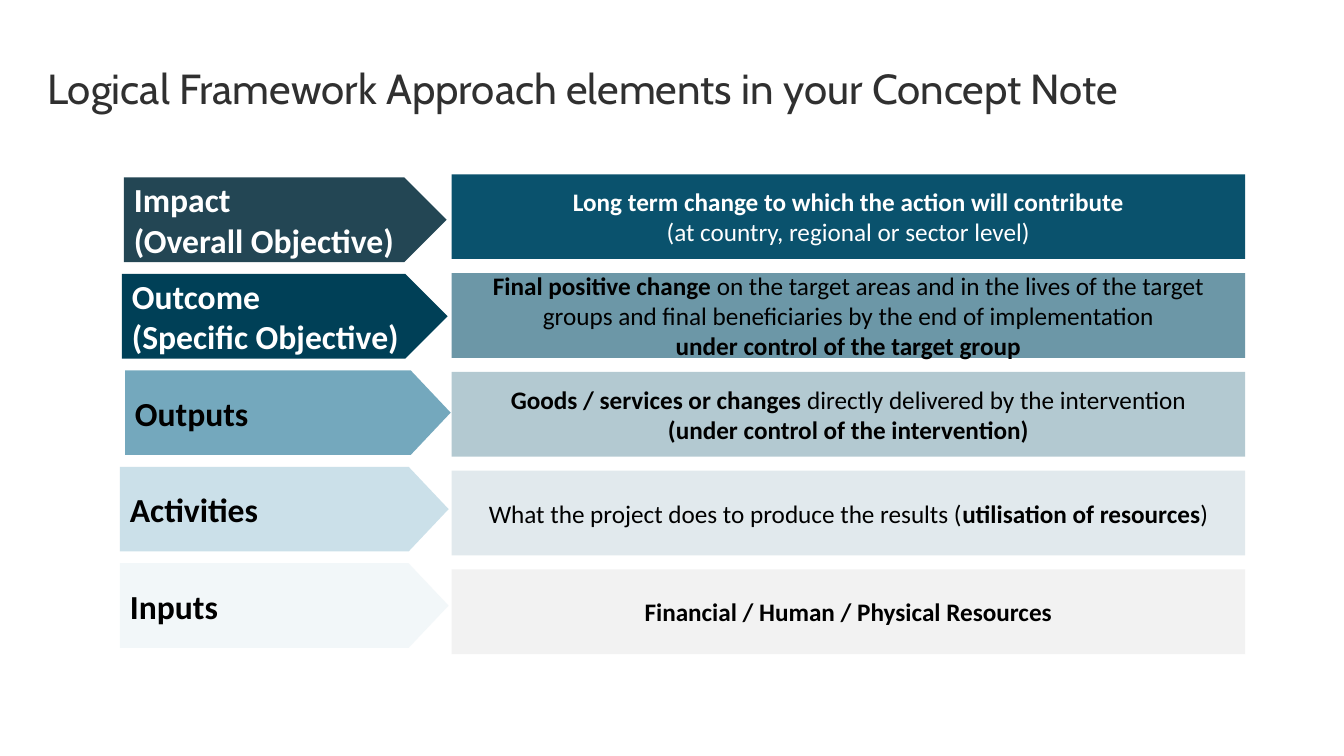
from lxml import etree
from pptx import Presentation
from pptx import util as u
from pptx.dml.color import RGBColor
from pptx.enum import shapes, text
from pptx.oxml.ns import qn

# Grid: both columns share a row height, each has its own pitch
ROW_H = 0.84
ARROW_TOP, ARROW_PITCH = 1.76, 0.957
BOX_LEFT, BOX_TOP, BOX_W, BOX_PITCH = 4.48, 1.73, 7.87, 0.98

# Arrow: left, width, point, fill, opacity %, font colour, lines
ARROWS = [
    (1.23, 3.20, 0.5, "234654", 100, "FFFFFF", ["**Impact**", "**(Overall Objective)**"]),
    (1.21, 3.23, 0.5, "004057", 100, "FFFFFF", ["**Outcome**", "**(Specific Objective)**"]),
    (1.24, 3.23, 0.472, "468CA8", 75, "000000", ["**Outputs**"]),
    (1.19, 3.26, 0.472, "C5DDE7", 89, "000000", ["**Activities**"]),
    (1.19, 3.26, 0.472, "E7F1F5", 50, "000000", ["**Inputs**"]),
]

# Description: fill, opacity %, font colour, lines (** switches bold)
BOXES = [
    ("0A526D", 100, "FFFFFF", ["**Long term change to which the action will contribute**",
                               "(at country, regional or sector level)"]),
    ("0A526D", 60, "000000", ["**Final positive change **on the target areas and in the lives of the "
                              "target groups and final beneficiaries by the end of implementation",
                              "**under control of the target group**"]),
    ("0A526D", 31, "000000", ["**Goods / services or changes **directly delivered by the intervention",
                              "**(under control of the intervention)**"]),
    ("0A526D", 12, "000000", ["What the project does to produce the results "
                              "(**utilisation of resources**)"]),
    ("F2F2F2", 100, "000000", ["**Financial / Human / Physical Resources**"]),
]


def rgb(value):
    return RGBColor.from_string(value)


def set_font(p, name, size, color):
    p.font.name = name
    p.font.size = u.Pt(size)
    p.font.color.rgb = rgb(color)


def add_panel(s, kind, left, top, width, fill, opacity):
    sp = s.shapes.add_shape(kind, *map(u.Inches, (left, top, width, ROW_H)))
    sp.shadow.inherit = False
    sp.line.fill.background()
    sp.fill.solid()
    sp.fill.fore_color.rgb = rgb(fill)
    if opacity < 100:
        color = sp.fill._xPr.find(".//" + qn("a:srgbClr"))
        etree.SubElement(color, qn("a:alpha"), val=str(opacity * 1000))
    return sp


def write_lines(sp, lines, size, color, align):
    tf = sp.text_frame
    tf.word_wrap = True
    tf.vertical_anchor = text.MSO_ANCHOR.MIDDLE
    for i, line in enumerate(lines):
        p = tf.paragraphs[0] if i == 0 else tf.add_paragraph()
        p.alignment = align
        set_font(p, "Calibri", size, color)
        for j, part in enumerate(line.split("**")):
            if part:
                r = p.add_run()
                r.text = part
                r.font.bold = j % 2 == 1


def add_title(s, title):
    sp = s.shapes.title
    sp.left, sp.top, sp.width, sp.height = map(u.Inches, (0.39, 0.64, 12.55, 0.68))
    tf = sp.text_frame
    tf.text = title
    tf.word_wrap = True
    tf.auto_size = text.MSO_AUTO_SIZE.NONE
    tf.vertical_anchor = text.MSO_ANCHOR.TOP
    tf.margin_left = tf.margin_right = u.Inches(0.08)
    tf.margin_top = tf.margin_bottom = u.Inches(0.04)
    p = tf.paragraphs[0]
    p.alignment = text.PP_ALIGN.LEFT
    p.line_spacing = 0.9
    set_font(p, "Cabin", 30, "303030")


def main():
    prs = Presentation()
    prs.slide_width, prs.slide_height = u.Inches(13.33), u.Inches(7.5)
    s = prs.slides.add_slide(prs.slide_layouts[5])
    add_title(s, "Logical Framework Approach elements in your Concept Note")

    # Level names
    for row, (left, width, point, fill, opacity, color, lines) in enumerate(ARROWS):
        sp = add_panel(s, shapes.MSO_SHAPE.PENTAGON, left, ARROW_TOP + row * ARROW_PITCH,
                       width, fill, opacity)
        sp.adjustments[0] = point
        write_lines(sp, lines, 24, color, text.PP_ALIGN.LEFT)

    # Level descriptions
    for row, (fill, opacity, color, lines) in enumerate(BOXES):
        sp = add_panel(s, shapes.MSO_SHAPE.RECTANGLE, BOX_LEFT, BOX_TOP + row * BOX_PITCH,
                       BOX_W, fill, opacity)
        write_lines(sp, lines, 18, color, text.PP_ALIGN.CENTER)

    prs.save("out.pptx")


if __name__ == "__main__":
    main()
